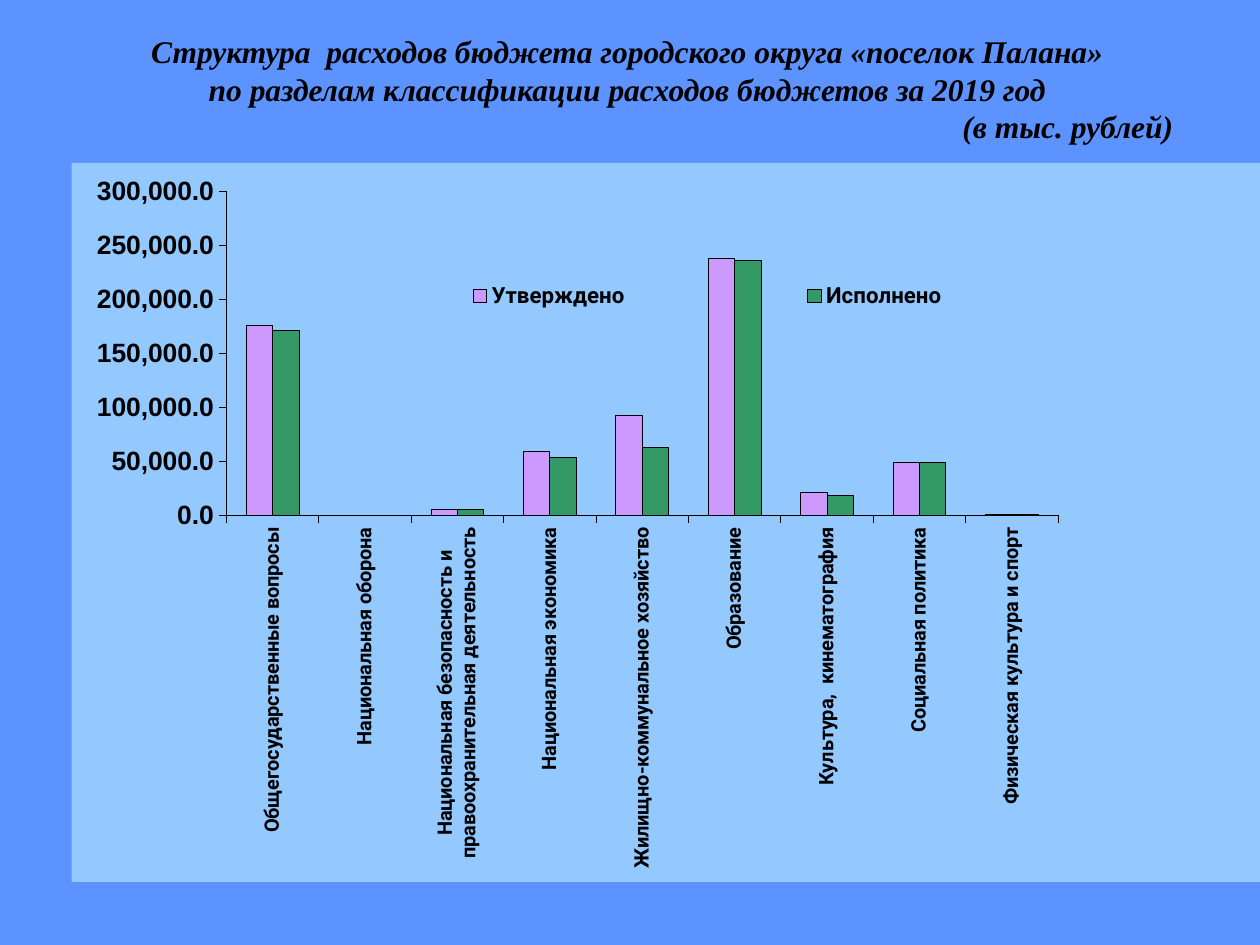
from lxml.etree import SubElement
from pptx import Presentation
from pptx.chart.data import CategoryChartData
from pptx.dml.color import RGBColor
from pptx.enum.chart import XL_CHART_TYPE, XL_LEGEND_POSITION, XL_TICK_LABEL_POSITION, XL_TICK_MARK
from pptx.enum.text import MSO_ANCHOR, PP_ALIGN
from pptx.oxml import parse_xml
from pptx.oxml.ns import nsdecls, qn
from pptx.util import Pt

BLACK = RGBColor(0x00, 0x00, 0x00)
BLUE = RGBColor(0x5D, 0x93, 0xFF)
PALE_CYAN = RGBColor(0xCC, 0xFF, 0xFF)
LILAC = RGBColor(0xCC, 0x99, 0xFF)
GREEN = RGBColor(0x33, 0x99, 0x66)

HEADING = [
    ("Структура  расходов бюджета городского округа «поселок Палана»", PP_ALIGN.CENTER),
    ("по разделам классификации расходов бюджетов за 2019 год", PP_ALIGN.CENTER),
    ("(в тыс. рублей)", PP_ALIGN.RIGHT),
]
EXPENSES = [
    ("Общегосударственные вопросы", 176000, 171000),
    ("Национальная оборона", 0, 0),
    ("Национальная безопасность и\nправоохранительная деятельность", 5000, 5000),
    ("Национальная экономика", 59000, 54000),
    ("Жилищно-коммунальное хозяйство", 93000, 63000),
    ("Образование", 238000, 236000),
    ("Культура,  кинематография", 21000, 18000),
    ("Социальная политика", 49000, 49000),
    ("Физическая культура и спорт", 1000, 1000),
]


def style_font(font, name, size):
    """Apply the bold black lettering used throughout the slide."""
    font.name, font.size, font.bold = name, Pt(size), True
    font.color.rgb = BLACK


def style_line(line):
    """Make a line thin and black."""
    line.color.rgb = BLACK
    line.width = Pt(0.25)


def style_axis(axis, font_name, size):
    """Format one chart axis with outward ticks and no gridlines."""
    axis.has_major_gridlines = False
    axis.major_tick_mark = XL_TICK_MARK.OUTSIDE
    axis.minor_tick_mark = XL_TICK_MARK.NONE
    style_line(axis.format.line)
    style_font(axis.tick_labels.font, font_name, size)


def set_layout(element, position, target=None):
    """Return a manual layout built from fractions, dropping the old one."""
    for old in element.findall(qn("c:layout")):
        element.remove(old)
    layout = parse_xml(f"<c:layout {nsdecls('c')}/>")
    manual = SubElement(layout, qn("c:manualLayout"))
    if target:
        SubElement(manual, qn("c:layoutTarget")).set("val", target)
    for mode in ("xMode", "yMode"):
        SubElement(manual, qn(f"c:{mode}")).set("val", "edge")
    for key, value in zip("xywh", position):
        SubElement(manual, qn(f"c:{key}")).set("val", str(value))
    return layout


def add_heading(slide, left, top, width, height):
    """Fill the title placeholder with the heading lines."""
    title = slide.shapes.title
    title.left, title.top, title.width, title.height = left, top, width, height
    frame = title.text_frame
    frame.word_wrap = True
    frame.vertical_anchor = MSO_ANCHOR.MIDDLE
    frame.margin_left, frame.margin_right = Pt(10), Pt(14)
    for index, (words, alignment) in enumerate(HEADING):
        line = frame.add_paragraph() if index else frame.paragraphs[0]
        line.alignment = alignment
        line.line_spacing = Pt(21.5)
        line.space_before = Pt(0)
        run = line.add_run()
        run.text = words
        style_font(run.font, "Times New Roman", 18)
        run.font.italic = True


def add_expense_chart(slide, left, top, width, height):
    """Draw approved and actual expenses by budget section."""
    sections, approved, actual = zip(*EXPENSES)
    data = CategoryChartData(number_format="#,##0.0")
    data.categories = sections
    data.add_series("Утверждено", approved)
    data.add_series("Исполнено", actual)
    chart = slide.shapes.add_chart(
        XL_CHART_TYPE.COLUMN_CLUSTERED, left, top, width, height, data).chart
    chart.has_title = False
    style_font(chart.font, "Roboto", 24.6)

    plot = chart.plots[0]
    plot.gap_width, plot.overlap, plot.vary_by_categories = 150, 0, False
    for series, color in zip(plot.series, (LILAC, GREEN)):
        series.format.fill.solid()
        series.format.fill.fore_color.rgb = color
        style_line(series.format.line)

    section_axis, amount_axis = chart.category_axis, chart.value_axis
    style_axis(section_axis, "Roboto", 11.4)
    section_axis.tick_label_position = XL_TICK_LABEL_POSITION.LOW
    label_body = section_axis._element.find(qn("c:txPr")).find(qn("a:bodyPr"))
    label_body.set("rot", "-5400000")
    label_body.set("vert", "horz")
    style_axis(amount_axis, "Arial", 15.1)
    amount_axis.minimum_scale, amount_axis.maximum_scale = 0, 300000
    amount_axis.major_unit = 50000
    amount_axis.tick_labels.number_format = "#,##0.0"
    amount_axis.tick_labels.number_format_is_linked = False

    chart.has_legend = True
    legend = chart.legend
    legend.position = XL_LEGEND_POSITION.RIGHT
    legend.include_in_layout = False
    style_font(legend.font, "Roboto", 12.7)
    legend_layout = set_layout(legend._element, (0.19, 0.16, 0.69, 0.05))
    legend._element.find(qn("c:legendPos")).addnext(legend_layout)

    chart_element = chart._chartSpace.find(qn("c:chart"))
    plot_area = chart_element.find(qn("c:plotArea"))
    plot_area.insert(0, set_layout(plot_area, (0.13, 0.04, 0.7, 0.45), "inner"))
    chart_element.addnext(parse_xml(
        f"<c:spPr {nsdecls('c', 'a')}><a:solidFill><a:srgbClr val='{PALE_CYAN}'>"
        "<a:alpha val='50000'/></a:srgbClr></a:solidFill>"
        "<a:ln><a:noFill/></a:ln></c:spPr>"))


def main():
    """Build and save the budget slide."""
    presentation = Presentation()
    presentation.slide_width, presentation.slide_height = Pt(720), Pt(540)
    slide = presentation.slides.add_slide(presentation.slide_layouts[5])
    slide.background.fill.solid()
    slide.background.fill.fore_color.rgb = BLUE
    add_heading(slide, Pt(36.5), Pt(15), Pt(648), Pt(71.5))
    add_expense_chart(slide, Pt(41), Pt(93), Pt(679), Pt(411))
    presentation.save("out.pptx")


if __name__ == "__main__":
    main()
